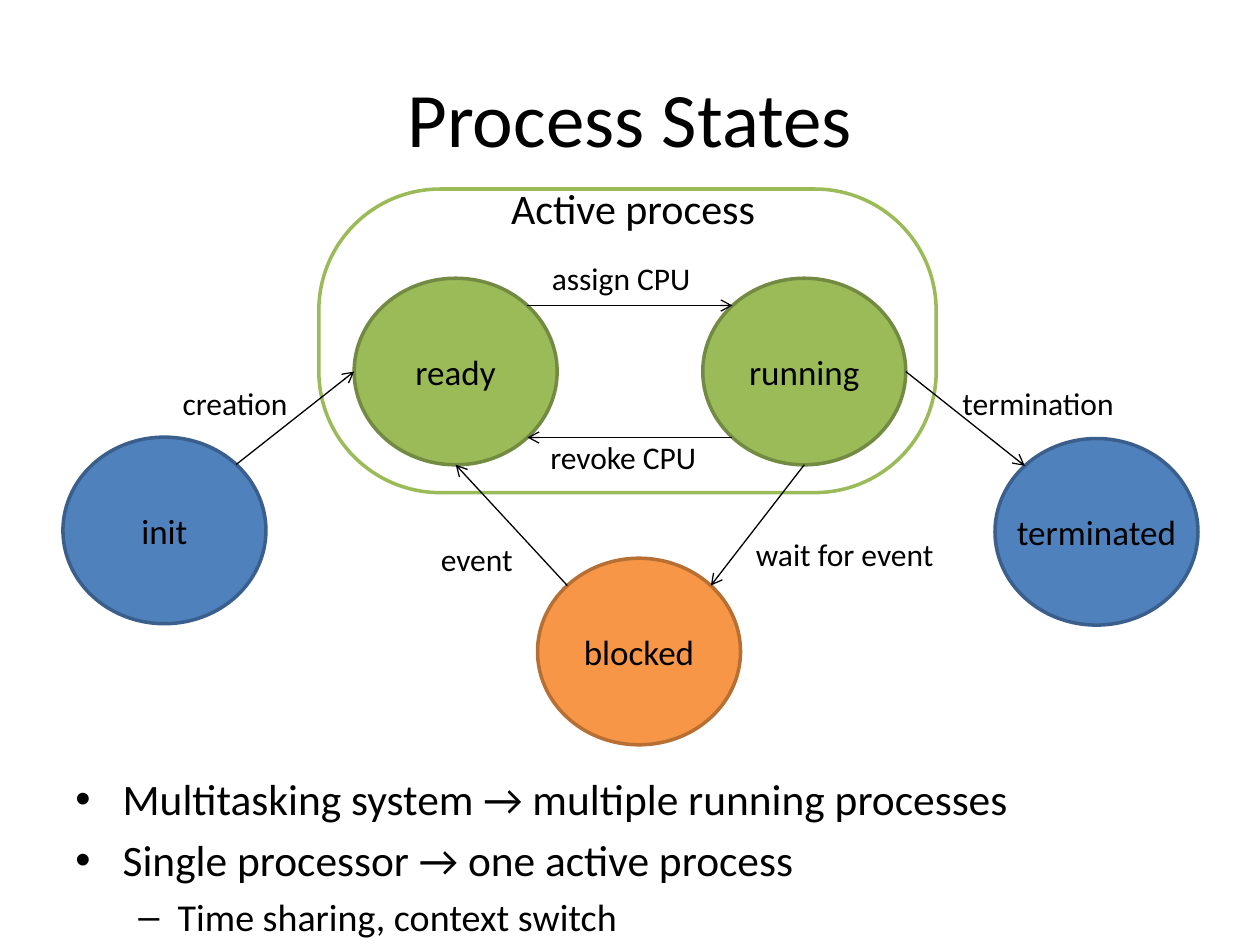
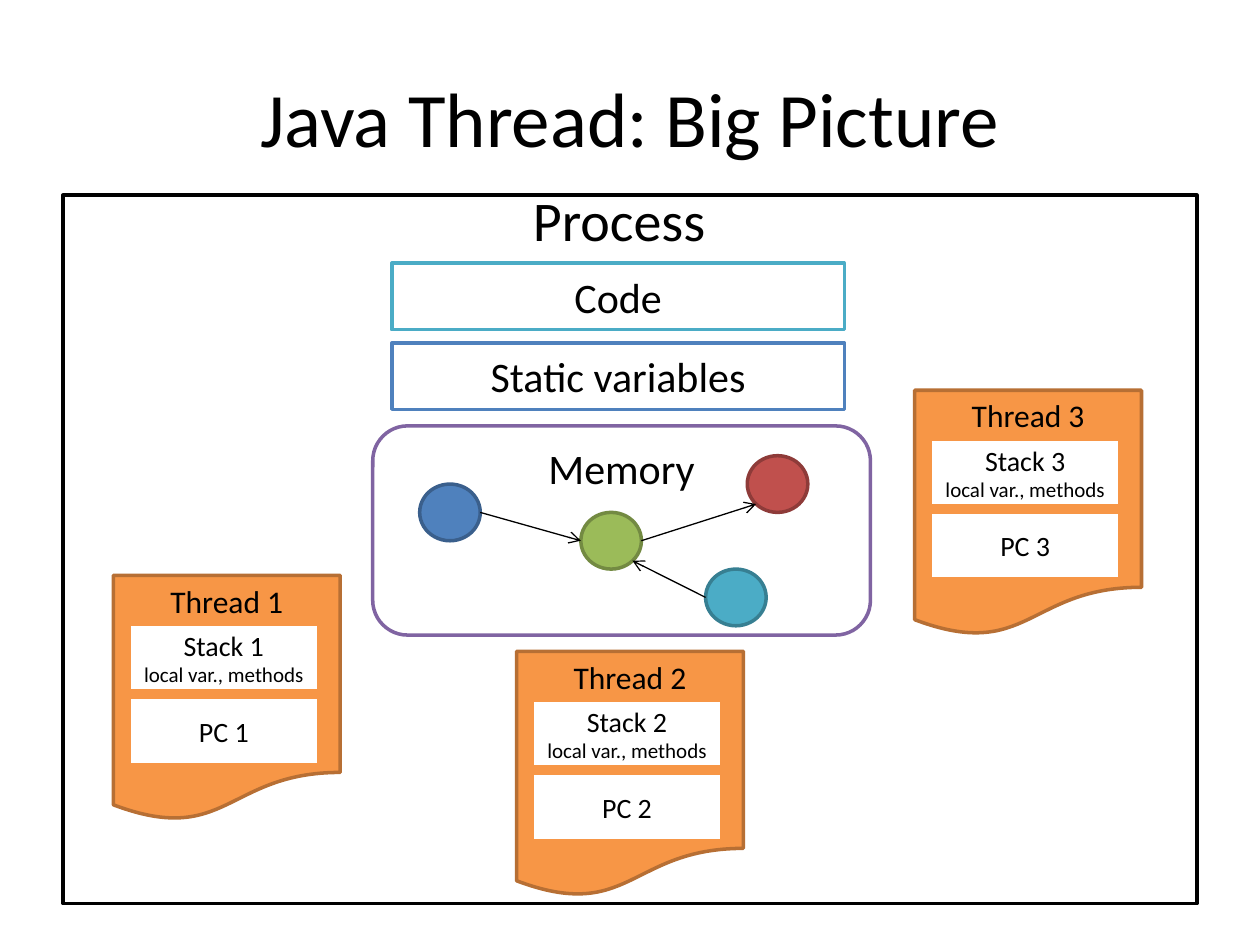
from lxml import etree
from pptx import Presentation
from pptx import util as u
from pptx.dml import color
from pptx.enum import shapes, text
from pptx.oxml import ns

Pt = u.Pt
FONT = "Calibri"
COLORS = {
    "black": "000000", "white": "FFFFFF", "purple": "8064A2",
    "blue": "4F81BD", "blue edge": "3A5F8C",
    "green": "9BBB59", "green edge": "738A42",
    "orange": "F79646", "orange edge": "B76F34",
    "red": "C0504D", "red edge": "8E3B39",
    "teal": "4BACC6", "teal edge": "377F92",
}
TITLE_BOX = (36, 21.6, 648, 90)

STATE_SIZE = (116, 106.6)
STATES = {
    "init": (36, 249.8, "blue"),
    "ready": (202.4, 159, "green"),
    "running": (401.6, 159, "green"),
    "blocked": (307.2, 319, "orange"),
    "terminated": (568.6, 250.6, "blue"),
}
TRANSITIONS = [
    ("init", "top right", "ready", "left"),
    ("ready", "top right", "running", "top left"),
    ("running", "bottom left", "ready", "bottom right"),
    ("blocked", "top left", "ready", "bottom"),
    ("running", "bottom", "blocked", "top right"),
    ("running", "right", "terminated", "top left"),
]
TRANSITION_LABELS = [
    ("creation", 97.2, 216, 75.6),
    ("event", 244.8, 305.3, 56.2),
    ("wait for event", 424.8, 302.4, 118.8),
    ("assign CPU", 308.2, 144.7, 94.3),
    ("revoke CPU", 307.4, 247, 100),
    ("termination", 542.9, 216, 102.2),
]
BULLETS = [
    ("Multitasking system → multiple running processes", 0),
    ("Single processor → one active process", 0),
    ("Time sharing, context switch", 1),
]
BULLET_LEVELS = [
    {"size": 24.8, "mark": "•", "left": 27, "hang": 27},
    {"size": 21.7, "mark": "–", "left": 58.5, "hang": 22.5},
]

SECTIONS = [("Code", "teal"), ("Static variables", "blue")]
OBJECT_SIZE = (34.6, 32.4)
OBJECTS = {
    "blue": (239.8, 276.6),
    "green": (331.9, 292.8),
    "red": (427, 260.4),
    "teal": (403.2, 325.2),
}
REFERENCES = [
    ("blue", "right", "green", "left"),
    ("green", "right", "red", "bottom left"),
    ("teal", "left", "green", "bottom right"),
]
THREADS = [(64.8, 328.8), (295.2, 372.2), (522.7, 223)]

DIAGONAL = 0.5 ** 0.5
SITES = {
    "left": (-1, 0), "right": (1, 0), "bottom": (0, 1),
    "top left": (-DIAGONAL, -DIAGONAL), "top right": (DIAGONAL, -DIAGONAL),
    "bottom left": (-DIAGONAL, DIAGONAL), "bottom right": (DIAGONAL, DIAGONAL),
}


def rgb(name):
    return color.RGBColor.from_string(COLORS[name])


def write(shape, *lines, size=18, align="CENTER", anchor="TOP", wrap=True, spacing=None):
    frame = shape.text_frame
    frame.word_wrap = wrap
    frame.vertical_anchor = getattr(text.MSO_ANCHOR, anchor)
    for index, line in enumerate(lines):
        words, line_size = line if isinstance(line, tuple) else (line, size)
        paragraph = frame.add_paragraph() if index else frame.paragraphs[0]
        paragraph.alignment = getattr(text.PP_ALIGN, align)
        if spacing:
            paragraph.line_spacing = spacing
        run = paragraph.add_run()
        run.text = words
        run.font.size = Pt(line_size)
        run.font.name = FONT
        run.font.color.rgb = rgb("black")
    return shape


def add_box(slide, left, top, width, height):
    return slide.shapes.add_textbox(Pt(left), Pt(top), Pt(width), Pt(height))


def add_shape(slide, kind, box, fill, edge):
    shape = slide.shapes.add_shape(getattr(shapes.MSO_SHAPE, kind), *map(Pt, box))
    shape.shadow.inherit = False
    shape.fill.solid()
    shape.fill.fore_color.rgb = rgb(fill)
    shape.line.color.rgb = rgb(edge)
    shape.line.width = Pt(2)
    return shape


def site_point(origin, size, site):
    return [Pt(start + extent / 2 * (1 + direction))
            for start, extent, direction in zip(origin, size, SITES[site])]


def add_arrows(slide, nodes, size, links):
    for source, source_site, target, target_site in links:
        arrow = slide.shapes.add_connector(
            shapes.MSO_CONNECTOR.STRAIGHT,
            *site_point(nodes[source][:2], size, source_site),
            *site_point(nodes[target][:2], size, target_site))
        arrow.line.color.rgb = rgb("black")
        arrow.line.width = Pt(0.75)
        etree.SubElement(arrow.line._get_or_add_ln(), ns.qn("a:tailEnd"), type="arrow")
        etree.SubElement(arrow._element.spPr, ns.qn("a:effectLst"))


def add_slide(presentation, title):
    slide = presentation.slides.add_slide(presentation.slide_layouts[6])
    write(add_box(slide, *TITLE_BOX), title, size=44, anchor="MIDDLE")
    return slide


def add_bullets(slide):
    body = add_box(slide, 36, 437.8, 648, 88)
    write(body, *[(words, BULLET_LEVELS[level]["size"]) for words, level in BULLETS],
          align="LEFT")
    for paragraph, (_, level) in zip(body.text_frame.paragraphs, BULLETS):
        style = BULLET_LEVELS[level]
        paragraph.level = level
        paragraph.space_before = Pt(5)
        properties = paragraph._p.get_or_add_pPr()
        properties.set("marL", str(Pt(style["left"])))
        properties.set("indent", str(-Pt(style["hang"])))
        etree.SubElement(properties, ns.qn("a:buFont"), typeface="Arial")
        etree.SubElement(properties, ns.qn("a:buChar"), char=style["mark"])


def build_process_states(presentation):
    slide = add_slide(presentation, "Process States")
    active = add_shape(slide, "ROUNDED_RECTANGLE", (182.2, 108, 352.8, 173.5), "white", "green")
    active.adjustments[0] = 0.4
    for name, (left, top, hue) in STATES.items():
        state = add_shape(slide, "OVAL", (left, top, *STATE_SIZE), hue, hue + " edge")
        write(state, name, size=20, anchor="MIDDLE", wrap=False)
    add_arrows(slide, STATES, STATE_SIZE, TRANSITIONS)
    for label, left, top, width in TRANSITION_LABELS:
        write(add_box(slide, left, top, width, 28.8), label, align="LEFT", wrap=False)
    write(add_box(slide, 283.7, 113, 156.2, 24.5), "Active process",
          size=24, wrap=False, spacing=0.5)
    add_bullets(slide)


def add_thread(slide, number, left, top):
    page = add_shape(slide, "FLOWCHART_DOCUMENT", (left, top, 129.6, 140.4),
                     "orange", "orange edge")
    write(page, f"Thread {number}")
    parts = [[f"Stack {number}", ("local var., methods", 12)], [f"PC {number}"]]
    for row, lines in enumerate(parts):
        part = add_shape(slide, "RECTANGLE", (left + 8.8, top + 28 + row * 41.8, 108.6, 38.2),
                         "white", "orange")
        write(part, *lines, size=16, anchor="MIDDLE")


def build_thread_picture(presentation):
    slide = add_slide(presentation, "Java Thread: Big Picture")
    add_shape(slide, "RECTANGLE", (36, 111.6, 648, 404.8), "white", "black")
    write(add_box(slide, 297.4, 102.2, 114.5, 46), "Process", size=32, align="LEFT", wrap=False)
    for row, (name, hue) in enumerate(SECTIONS):
        section = add_shape(slide, "RECTANGLE", (223.9, 150.4 + row * 45.5, 258.6, 38),
                            "white", hue)
        write(section, name, size=24, anchor="MIDDLE")
    memory = add_shape(slide, "ROUNDED_RECTANGLE", (213, 243.4, 284.4, 119.5), "white", "purple")
    write(memory, "Memory", size=24)
    for hue, origin in OBJECTS.items():
        add_shape(slide, "OVAL", (*origin, *OBJECT_SIZE), hue, hue + " edge")
    add_arrows(slide, OBJECTS, OBJECT_SIZE, REFERENCES)
    for number, (left, top) in enumerate(THREADS, 1):
        add_thread(slide, number, left, top)


def main():
    presentation = Presentation()
    presentation.slide_width = Pt(720)
    presentation.slide_height = Pt(540)
    build_process_states(presentation)
    build_thread_picture(presentation)
    presentation.save("out.pptx")


if __name__ == "__main__":
    main()
